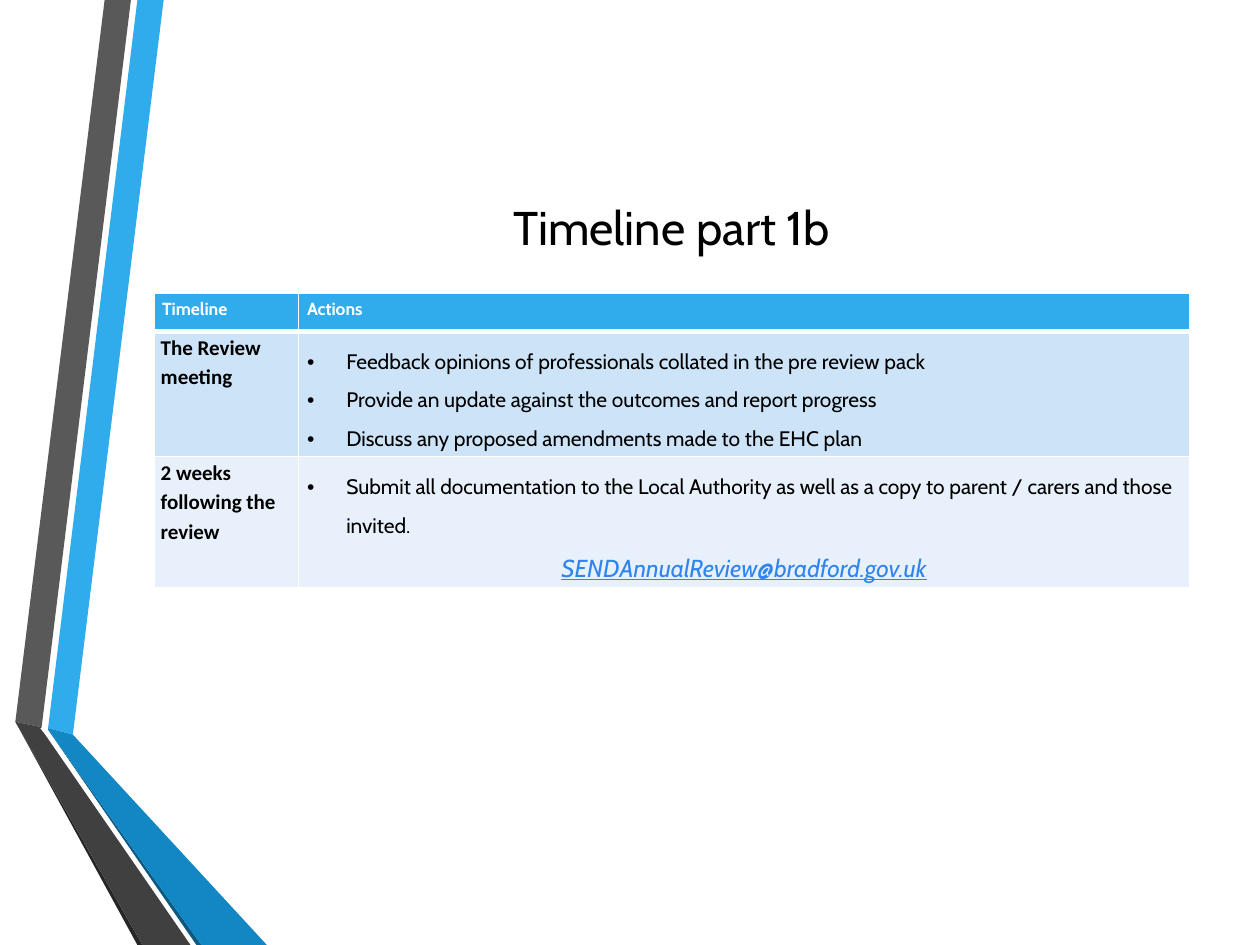
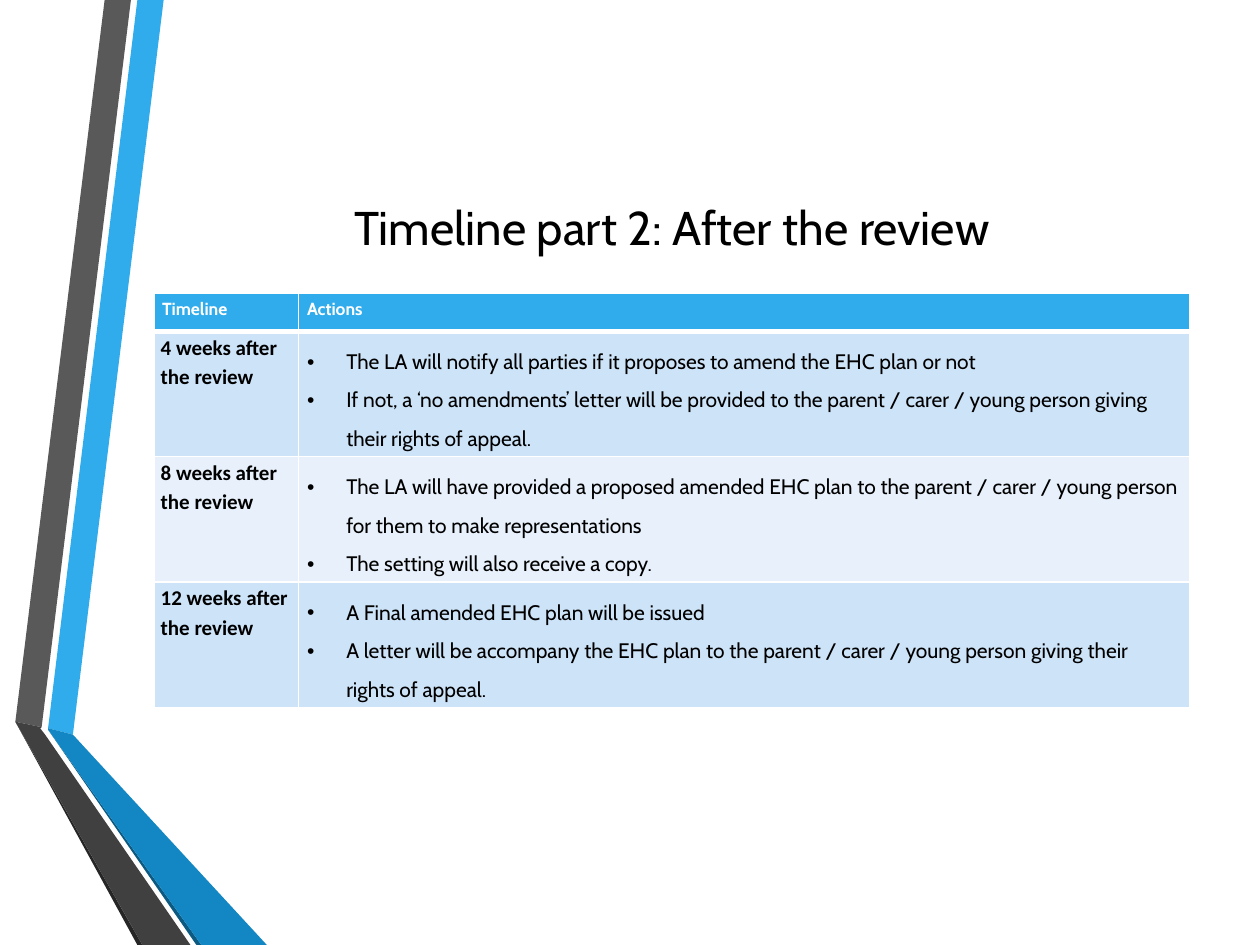
from lxml import etree
from pptx import Presentation
from pptx import util as u
from pptx.dml.color import RGBColor
from pptx.enum import text
from pptx.oxml import ns

COLOURS = {
    "black": "000000", "white": "FFFFFF", "link": "3085ED",
    "blue": "30ACEC", "blue_fold": "1287C3", "blue_edge": "0C5A82",
    "grey": "595959", "grey_fold": "404040", "grey_edge": "262626",
    "row_dark": "CDE3F8", "row_light": "E8F1FB",
}
BANDS = [
    ("blue", [(97, 1468), (147, 1481), (330, 0), (277, 0)]),
    ("grey", [(264, 0), (211, 0), (31, 1455), (84, 1466)]),
    ("grey_edge", [(31, 1455), (277, 1905), (287, 1905)]),
    ("blue_edge", [(97, 1471), (396, 1905), (406, 1905)]),
    ("blue_fold", [(97, 1471), (406, 1905), (538, 1905), (147, 1481), (97, 1468)]),
    ("grey_fold", [(384, 1905), (91, 1481), (81, 1468), (84, 1466), (31, 1455), (287, 1905)]),
]
EMAIL = "SENDAnnualReview@bradford.gov.uk"
TIMELINES = [
    ("Timeline part 1b", [
        ("The Review meeting", 2.46, [
            "Feedback opinions of professionals collated in the pre review pack",
            "Provide an update against the outcomes and report progress",
            "Discuss any proposed amendments made to the EHC plan",
        ]),
        ("2 weeks following the review", 2.57, [
            "Submit all documentation to the Local Authority as well as a copy to parent / carers and those invited.",
            EMAIL,
        ]),
    ]),
    ("Timeline part 2: After the review", [
        ("4 weeks after the review", 2.46, [
            "The LA will notify all parties if it proposes to amend the EHC plan or not",
            "If not, a ‘no amendments’ letter will be provided to the parent / carer / young person giving their rights of appeal.",
        ]),
        ("8 weeks after the review", 2.46, [
            "The LA will have provided a proposed amended EHC plan to the parent / carer / young person for them to make representations",
            "The setting will also receive a copy.",
        ]),
        ("12 weeks after the review", 2.46, [
            "A Final amended EHC plan will be issued",
            "A letter will be accompany the EHC plan to the parent / carer / young person giving their rights of appeal.",
        ]),
    ]),
]
LEFT, WIDTH = 3.1, 20.88
COLUMNS = [2.92, 17.96]
HEADER_HEIGHT = 0.76


def set_font(paragraph, name, size, colour, bold=False):
    font = paragraph.font
    font.name, font.size, font.bold = name, u.Pt(size), bold
    font.color.rgb = RGBColor.from_string(COLOURS[colour])


def format_cell(cell, fill, top, bottom, side_margin, edge_margin):
    properties = cell._tc.get_or_add_tcPr()
    for side, points in (("L", 1), ("R", 1), ("T", top), ("B", bottom)):
        line = etree.SubElement(properties, ns.qn(f"a:ln{side}"), w=str(u.Pt(points)))
        solid = etree.SubElement(line, ns.qn("a:solidFill"))
        etree.SubElement(solid, ns.qn("a:srgbClr"), val=COLOURS["white"])
    cell.fill.solid()
    cell.fill.fore_color.rgb = RGBColor.from_string(COLOURS[fill])
    cell.margin_left = cell.margin_right = u.Cm(side_margin)
    cell.margin_top = cell.margin_bottom = u.Cm(edge_margin)


presentation = Presentation()
presentation.slide_width = u.Cm(25.4)
presentation.slide_height = u.Cm(19.05)

for heading, stages in TIMELINES:
    slide = presentation.slides.add_slide(presentation.slide_layouts[5])

    for colour, points in BANDS:
        builder = slide.shapes.build_freeform(*points[0], scale=u.Cm(0.01))
        builder.add_line_segments(points[1:], close=True)
        band = builder.convert_to_shape()
        band.shadow.inherit = False
        band.fill.solid()
        band.fill.fore_color.rgb = RGBColor.from_string(COLOURS[colour])
        band.line.fill.background()

    title = slide.shapes.title
    title.left, title.top = u.Cm(LEFT), u.Cm(3.81)
    title.width, title.height = u.Cm(WIDTH), u.Cm(1.52)
    title.text_frame.text = heading
    title.text_frame.auto_size = text.MSO_AUTO_SIZE.NONE
    title.text_frame.vertical_anchor = text.MSO_ANCHOR.MIDDLE
    title.text_frame.paragraphs[0].alignment = text.PP_ALIGN.CENTER
    set_font(title.text_frame.paragraphs[0], "Cabin", 27, "black")

    heights = [HEADER_HEIGHT] + [height for _, height, _ in stages]
    table = slide.shapes.add_table(
        len(heights), 2, u.Cm(LEFT), u.Cm(5.92), u.Cm(WIDTH), u.Cm(sum(heights))).table
    for column, width in zip(table.columns, COLUMNS):
        column.width = u.Cm(width)
    for row, height in zip(table.rows, heights):
        row.height = u.Cm(height)

    for cell, label in zip(table.rows[0].cells, ("Timeline", "Actions")):
        format_cell(cell, "blue", 1, 3, 0.17, 0.1)
        cell.text = label
        set_font(cell.text_frame.paragraphs[0], "Cabin", 10, "white", True)

    for number, (stage, _, actions) in enumerate(stages, 1):
        fill = "row_dark" if number % 2 else "row_light"
        top = 3 if number == 1 else 1
        stage_cell, action_cell = table.rows[number].cells
        format_cell(stage_cell, fill, top, 1, 0.14, 0)
        format_cell(action_cell, fill, top, 1, 0.17, 0.1)

        stage_cell.text = stage
        paragraph = stage_cell.text_frame.paragraphs[0]
        paragraph.line_spacing = 1.15
        set_font(paragraph, "Calibri", 12, "black", True)

        action_cell.text = "\n".join(actions)
        for paragraph in action_cell.text_frame.paragraphs:
            paragraph.line_spacing = 1.5
            if paragraph.text == EMAIL:
                paragraph.alignment = text.PP_ALIGN.CENTER
                set_font(paragraph, "Cabin", 14, "link")
                paragraph.font.italic = paragraph.font.underline = True
                continue
            properties = paragraph._p.get_or_add_pPr()
            properties.set("marL", str(u.Cm(0.79)))
            properties.set("indent", str(-u.Cm(0.79)))
            etree.SubElement(properties, ns.qn("a:buFont"), typeface="Arial")
            etree.SubElement(properties, ns.qn("a:buChar"), char="•")
            set_font(paragraph, "Cabin", 12, "black")

presentation.save("out.pptx")
